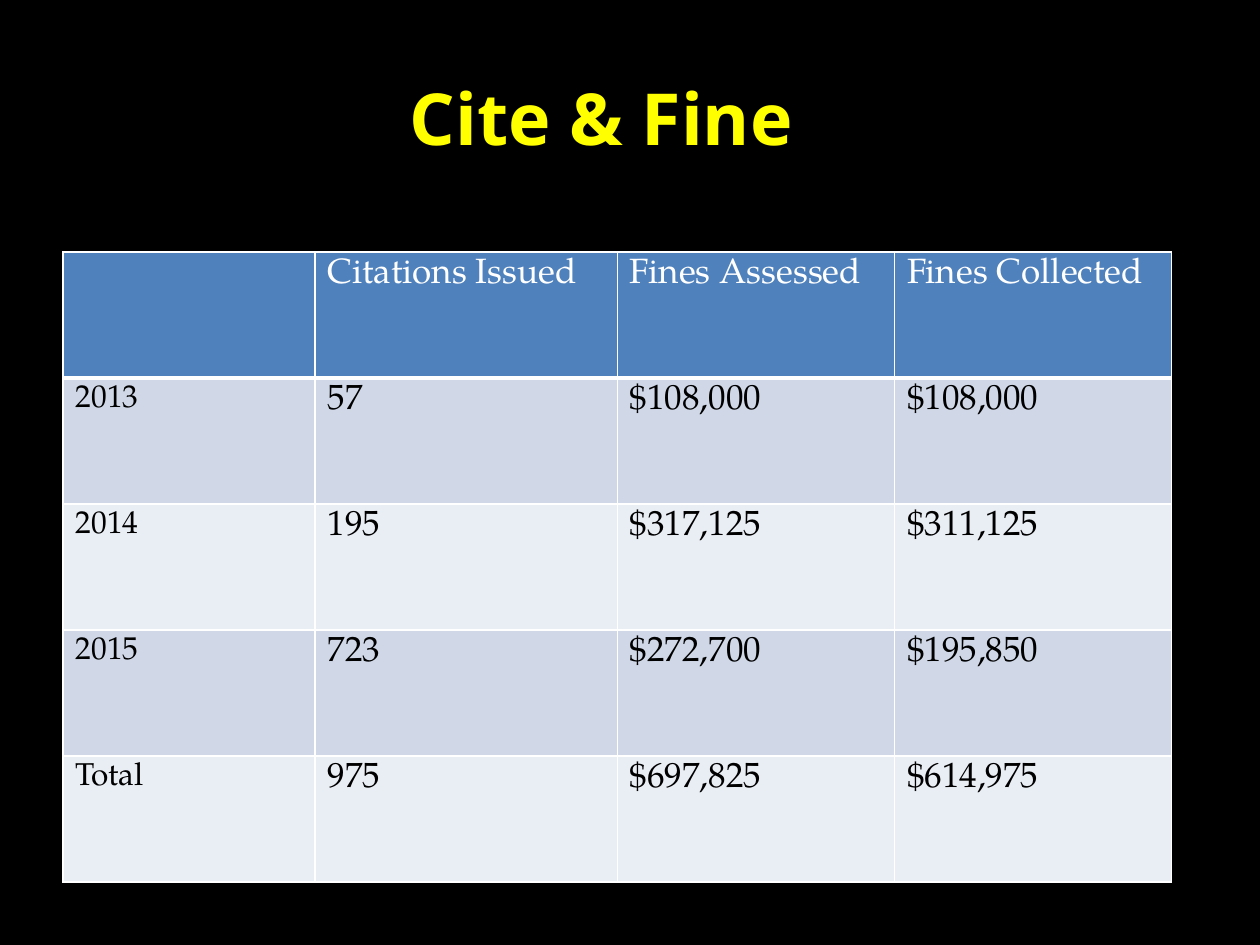
from lxml.etree import SubElement
from pptx import Presentation
from pptx.dml.color import RGBColor
from pptx.enum.text import MSO_ANCHOR, PP_ALIGN
from pptx.oxml.ns import qn
from pptx.util import Cm, Pt

BLACK = RGBColor(0x00, 0x00, 0x00)
WHITE = RGBColor(0xFF, 0xFF, 0xFF)
YELLOW = RGBColor(0xFF, 0xFF, 0x00)
HEADER_BLUE = RGBColor(0x4F, 0x81, 0xBD)
BAND_DARK = RGBColor(0xD0, 0xD8, 0xE8)
BAND_LIGHT = RGBColor(0xE9, 0xED, 0xF4)

TITLE_FONT = "Noto Sans"
TABLE_FONT = "TeX Gyre Pagella"
COLUMN_WEIGHTS = (10, 12, 11, 11)
FINES = (
    ("", "Citations Issued", "Fines Assessed", "Fines Collected"),
    ("2013", "57", "$108,000", "$108,000"),
    ("2014", "195", "$317,125", "$311,125"),
    ("2015", "723", "$272,700", "$195,850"),
    ("Total", "975", "$697,825", "$614,975"),
)


def format_span(span, color, **values):
    """Apply font values and a colour to a run."""
    for name, value in values.items():
        setattr(span.font, name, value)
    span.font.color.rgb = color


def set_borders(cell, widths):
    """Draw white borders of the given widths in points, keyed by side."""
    properties = cell._tc.get_or_add_tcPr()
    for side, width in widths.items():
        line = SubElement(properties, qn(f"a:ln{side}"), w=str(Pt(width)))
        fill = SubElement(line, qn("a:solidFill"))
        SubElement(fill, qn("a:srgbClr"), val=str(WHITE))


def add_title(page, text, left, top, width, height):
    """Place the title placeholder in the given box."""
    box = page.shapes.title
    frame = {"left": left, "top": top, "width": width, "height": height}
    for name, value in frame.items():
        setattr(box, name, value)
    box.text_frame.vertical_anchor = MSO_ANCHOR.MIDDLE
    para = box.text_frame.paragraphs[0]
    para.alignment = PP_ALIGN.CENTER
    span = para.add_run()
    span.text = text
    format_span(span, YELLOW, name=TITLE_FONT, size=Pt(41), bold=True)


def add_fines_table(page, rows, left, top, width, height):
    """Fill the given box with a banded table of citations and fines."""
    table = page.shapes.add_table(
        len(rows), len(COLUMN_WEIGHTS), left, top, width, height
    ).table
    for column, weight in zip(table.columns, COLUMN_WEIGHTS):
        column.width = round(width * weight / sum(COLUMN_WEIGHTS))
    for row_index, values in enumerate(rows):
        is_header = row_index == 0
        band = BAND_DARK if row_index % 2 else BAND_LIGHT
        for column_index, text in enumerate(values):
            cell = table.cell(row_index, column_index)
            set_borders(cell, {"L": 1, "R": 1, "T": 1, "B": 3 if is_header else 1})
            cell.fill.solid()
            cell.fill.fore_color.rgb = HEADER_BLUE if is_header else band
            if text:
                span = cell.text_frame.paragraphs[0].add_run()
                span.text = text
                format_span(
                    span,
                    WHITE if is_header else BLACK,
                    name=TABLE_FONT,
                    size=Pt(20 if column_index else 18),
                    bold=False,
                )


def main():
    """Build and save the deck."""
    deck = Presentation()
    deck.slide_width, deck.slide_height = Cm(25.4), Cm(19.05)
    page = deck.slides.add_slide(deck.slide_layouts[5])
    page.background.fill.solid()
    page.background.fill.fore_color.rgb = BLACK
    add_title(page, "Cite & Fine\t", Cm(1.27), Cm(0.76), Cm(22.86), Cm(3.18))
    add_fines_table(page, FINES, Cm(1.27), Cm(5.08), Cm(22.35), Cm(12.7))
    deck.save("out.pptx")


if __name__ == "__main__":
    main()
